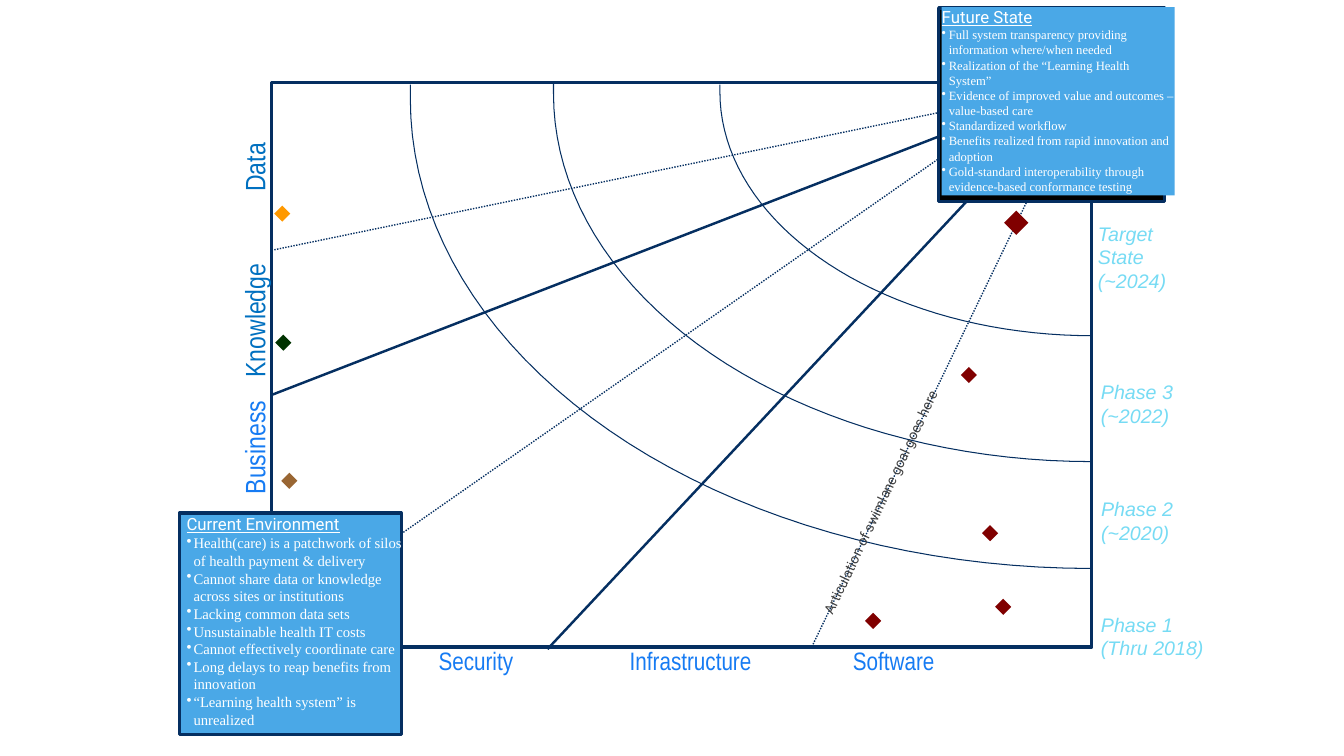
from math import cos, pi, sin

from lxml.etree import SubElement
from pptx import Presentation
from pptx.dml.color import RGBColor
from pptx.enum.dml import MSO_LINE
from pptx.enum.shapes import MSO_CONNECTOR, MSO_SHAPE
from pptx.enum.text import MSO_ANCHOR, PP_ALIGN
from pptx.oxml.ns import qn
from pptx.util import Inches, Pt

CELL = 0.1  # the slide is a grid of 133.3 columns by 75 rows
COLORS = {
    "navy": "052F61", "panel": "4AA8E7", "shade": "000000", "white": "FFFFFF",
    "phase": "76DBF4", "blue": "167BF3", "deep blue": "0070C0", "goal": "404040",
    "red": "800000", "orange": "FF9900", "green": "003300", "brown": "996633",
}

# Roadmap frame, in columns and rows
LEFT, TOP, WIDTH, HEIGHT = 26.9, 8.2, 81.4, 56
RIGHT, BOTTOM = LEFT + WIDTH, TOP + HEIGHT

# Swimlane borders: start, end, dotted
LANES = [
    ((107.5, TOP), (27.1, 24.8), True),
    ((106.9, TOP), (LEFT, 39.2), False),
    ((105.2, 7.3), (34, 57), True),
    ((106.9, TOP), (54.3, 64.4), False),
]
SOFTWARE_LANE = ((107.3, 8.7), (80.6, 64), True)
# Phase borders: centre row, horizontal radius, vertical radius, top row
ARCS = [(9.1, 36.9, 24.2, 8.4), (9.3, 53.4, 36.5, TOP), (9.8, 67.6, 46.6, 8.4)]

# Phase labels: text, column, row, width
PHASES = [
    ("Target State\v(~2024)", 108.9, 22, 7.6),
    ("Phase 3\v(~2022)", 109.2, 37.7, 7.3),
    ("Phase 2\v(~2020)", 109.2, 49.3, 7.9),
    ("Phase 1\n(Thru 2018)", 109.2, 60.8, 11.6),
]
# Lane labels: text, column, width, alignment
BOTTOM_LANES = [
    ("Security", 40.1, 14.2, PP_ALIGN.CENTER),
    ("Infrastructure", 57.5, 22, PP_ALIGN.CENTER),
    ("Software", 84.6, 22, PP_ALIGN.LEFT),
]
# Lane labels turned upwards: text, column, row, width, colour
SIDE_LANES = [
    ("Data", 14.2, 14.9, 22.1, "deep blue"),
    ("Knowledge", 18.9, 30.1, 12.7, "deep blue"),
    ("Business", 17, 42.7, 16.5, "blue"),
]
# Milestones: column, row, size, colour
MILESTONES = [
    (27.2, 20.4, 1.6, "orange"), (27.3, 33.2, 1.6, "green"),
    (27.9, 46.9, 1.6, "brown"), (99.6, 20.9, 2.4, "red"),
    (95.3, 36.4, 1.6, "red"), (97.4, 52.1, 1.6, "red"),
    (98.7, 59.4, 1.6, "red"), (85.8, 60.8, 1.6, "red"),
]

CURRENT = [
    "Current Environment",
    "Health(care) is a patchwork of silos of health payment & delivery",
    "Cannot share data or knowledge across sites or institutions",
    "Lacking common data sets",
    "Unsustainable health IT costs",
    "Cannot effectively coordinate care",
    "Long delays to reap benefits from innovation",
    "“Learning health system” is unrealized",
]
FUTURE = [
    "Future State",
    "Full system transparency providing information where/when needed",
    "Realization of the “Learning Health System”",
    "Evidence of improved value and outcomes – value-based care",
    "Standardized workflow",
    "Benefits realized from rapid innovation and adoption",
    "Gold-standard interoperability through evidence-based conformance testing",
]


def grid(*cells):
    return [Inches(cell * CELL) for cell in cells]


def color(name):
    return RGBColor.from_string(COLORS[name])


def set_line(line, weight):
    line.color.rgb = color("navy")
    line.width = Pt(weight)


def style_runs(paragraph, size, font, color_name):
    for run in paragraph.runs:
        run.font.size = Pt(size)
        run.font.name = font
        run.font.color.rgb = color(color_name)


def add_block(slide, kind, box, fill=None, outlined=False):
    shape = slide.shapes.add_shape(kind, *grid(*box))
    shape.shadow.inherit = False
    if fill:
        shape.fill.solid()
        shape.fill.fore_color.rgb = color(fill)
    else:
        shape.fill.background()
    if outlined:
        set_line(shape.line, 2.25)
    else:
        shape.line.fill.background()
    return shape


def add_lane(slide, start, end, dotted):
    lane = slide.shapes.add_connector(MSO_CONNECTOR.STRAIGHT, *grid(*start, *end))
    set_line(lane.line, 1 if dotted else 1.75)
    if dotted:
        lane.line.dash_style = MSO_LINE.ROUND_DOT
    SubElement(lane._element.spPr, qn("a:effectLst"))


def add_arc(slide, center, radius_x, radius_y, top, steps=40):
    """Quarter ellipse from the right border, then straight up to the top."""
    angles = [pi / 2 * step / steps for step in range(steps + 1)]
    points = [grid(RIGHT - radius_x * sin(angle), center + radius_y * cos(angle))
              for angle in angles]
    points.append(grid(RIGHT - radius_x, top))
    builder = slide.shapes.build_freeform(*points[0])
    builder.add_line_segments(points[1:], close=False)
    arc = builder.convert_to_shape()
    arc.shadow.inherit = False
    arc.fill.background()
    set_line(arc.line, 0.75)


def add_label(slide, text, box, size, font, color_name,
              align=PP_ALIGN.LEFT, rotation=0, italic=False):
    label = slide.shapes.add_textbox(*grid(*box))
    label.rotation = rotation
    frame = label.text_frame
    frame.margin_left = frame.margin_right = frame.margin_top = frame.margin_bottom = 0
    frame.word_wrap = True
    frame.text = text
    for paragraph in frame.paragraphs:
        paragraph.alignment = align
        style_runs(paragraph, size, font, color_name)
        for run in paragraph.runs:
            run.font.italic = italic
    return label


def add_state_text(slide, lines, box, size):
    """Underlined heading followed by a bulleted list."""
    label = add_label(slide, "\n".join(lines), box, size, "Times New Roman", "white")
    heading, *items = label.text_frame.paragraphs
    style_runs(heading, 12, "Roboto", "white")
    heading.runs[0].font.underline = True
    for item in items:
        properties = item._p.get_or_add_pPr()
        properties.set("marL", str(Inches(0.07)))
        properties.set("indent", str(-Inches(0.07)))
        SubElement(properties, qn("a:buChar"), char="•")


def main():
    presentation = Presentation()
    presentation.slide_width, presentation.slide_height = grid(133.3, 75)
    slide = presentation.slides.add_slide(presentation.slide_layouts[6])

    # Frame, swimlanes and phases
    add_block(slide, MSO_SHAPE.RECTANGLE, (LEFT, TOP, WIDTH, HEIGHT), outlined=True)
    for lane in LANES + [SOFTWARE_LANE]:
        add_lane(slide, *lane)
    for arc in ARCS:
        add_arc(slide, *arc)

    # Labels around the frame
    for text, column, row, width in PHASES:
        add_label(slide, text, (column, row, width, 4.7), 14, "Arial", "phase", italic=True)
    for text, column, width, align in BOTTOM_LANES:
        add_label(slide, text, (column, BOTTOM - 0.2, width, 3), 18, "Arial Narrow", "blue", align)
    for text, column, row, width, tint in SIDE_LANES:
        add_label(slide, text, (column, row, width, 3.4), 20, "Arial Narrow", tint,
                  PP_ALIGN.CENTER, 270)

    # Current and future state panels
    add_block(slide, MSO_SHAPE.RECTANGLE, (17.8, 50.9, 22, 22), "panel", outlined=True)
    add_state_text(slide, CURRENT, (18.5, 51, 22.9, 23.2), 10.5)
    add_block(slide, MSO_SHAPE.RECTANGLE, (93.1, 0.8, 22.4, 19.2), "shade", outlined=True)
    future_box = (93.4, 0.7, 23.1, 18.7)
    add_block(slide, MSO_SHAPE.RECTANGLE, future_box, "panel")
    add_state_text(slide, FUTURE, future_box, 9)

    # Swimlane goal and milestones
    goal = add_label(slide, "Articulation of swimlane goal goes here",
                     (68.1, 38.9, 48.1, 1.5), 10, "Roboto", "goal", rotation=295.4)
    goal.text_frame.margin_left = Inches(0.06)
    goal.text_frame.vertical_anchor = MSO_ANCHOR.MIDDLE
    for column, row, size, tint in MILESTONES:
        add_block(slide, MSO_SHAPE.DIAMOND, (column, row, size, size), tint)

    presentation.save("out.pptx")


if __name__ == "__main__":
    main()
